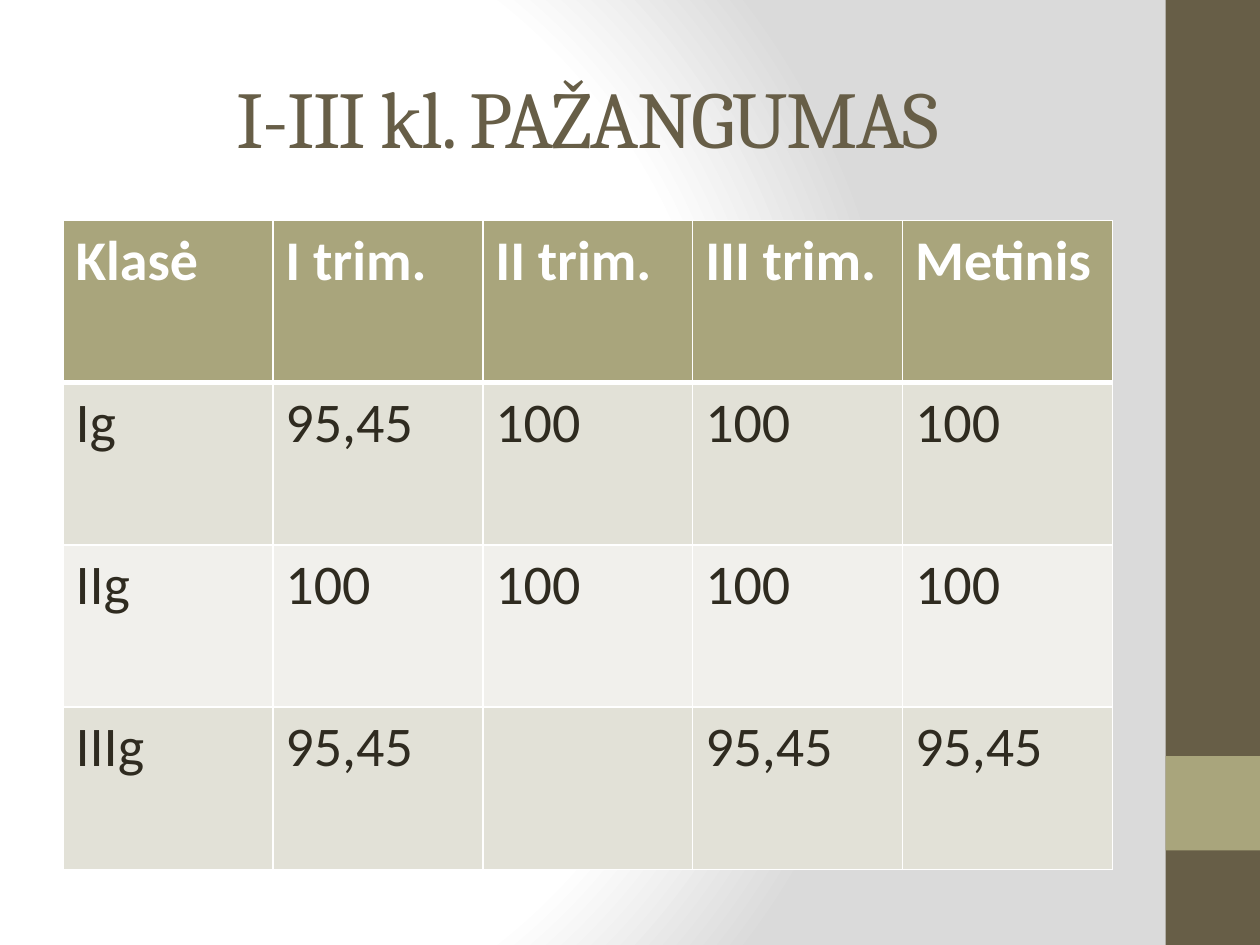
import pptx
import pptx.dml.color
import pptx.enum.shapes
import pptx.enum.text
import pptx.oxml
import pptx.oxml.ns
import pptx.util

WIDE, HIGH = 10, 7.5
LEFT, SPAN = 0.5, 8.33
HUES = {
    "brown": "675E47", "olive": "A9A57C", "ink": "2F2B20",
    "white": "FFFFFF", "grey": "DADADA", "band": "E2E1D7", "pale": "F1F0EC",
}
ROWS = [
    ["Klasė", "I trim.", "II trim.", "III trim.", "Metinis"],
    ["Ig", "95,45", "100", "100", "100"],
    ["IIg", "100", "100", "100", "100"],
    ["IIIg", "95,45", "", "95,45", "95,45"],
]


def inch(*sizes):
    return [pptx.util.Inches(size) for size in sizes]


def paint(fill, hue):
    fill.solid()
    fill.fore_color.rgb = pptx.dml.color.RGBColor.from_string(HUES[hue])


def parse(text):
    """Turn a snippet of DrawingML into an element."""
    head, tail = text.split(">", 1)
    space = pptx.oxml.ns.nsdecls("a")
    return pptx.oxml.parse_xml(f"{head} {space}>{tail}")


def write(frame, text, face, size, hue, bold=False):
    run = frame.paragraphs[0].add_run()
    run.text = text
    run.font.name = face
    run.font.size = pptx.util.Pt(size)
    run.font.bold = bold
    paint(run.font.fill, hue)
    return run


def shade(slide):
    """Give the slide a round gradient from white to grey."""
    slide.background.fill.gradient()
    grad = slide.element.xpath(".//a:gradFill")[0]
    for part in list(grad):
        grad.remove(part)
    stops = "".join(
        f'<a:gs pos="{spot * 1000}"><a:srgbClr val="{HUES[hue]}"/></a:gs>'
        for spot, hue in [(0, "white"), (75, "white"), (100, "grey")])
    grad.append(parse(f"<a:gsLst>{stops}</a:gsLst>"))
    grad.append(parse('<a:path path="circle"><a:fillToRect l="20000" t="50000" '
                      'r="100000" b="50000"/></a:path>'))


def block(slide, top, tall, hue):
    """Add a piece of the band along the right edge."""
    side = 0.75
    kind = pptx.enum.shapes.MSO_SHAPE.RECTANGLE
    shape = slide.shapes.add_shape(kind, *inch(WIDE - side, top, side, tall))
    shape.shadow.inherit = False
    paint(shape.fill, hue)
    shape.line.fill.background()


def title(slide, text):
    shape = slide.shapes.title
    shape.left, shape.top, shape.width, shape.height = inch(LEFT, 0.3, SPAN, 1.25)
    frame = shape.text_frame
    frame.vertical_anchor = pptx.enum.text.MSO_ANCHOR.MIDDLE
    frame.paragraphs[0].alignment = pptx.enum.text.PP_ALIGN.CENTER
    run = write(frame, text, "Cambria", 46, "brown")
    run.font._element.set("spc", "-100")


def border(cell, row):
    """Draw white cell edges, thick below the header row."""
    thick = {(0, "B"), (1, "T")}
    for side in "LRTB":
        width = pptx.util.Pt(3 if (row, side) in thick else 1)
        cell._tc.get_or_add_tcPr().append(parse(
            f'<a:ln{side} w="{width}"><a:solidFill>'
            f'<a:srgbClr val="{HUES["white"]}"/></a:solidFill></a:ln{side}>'))


def grid(slide, rows):
    shape = slide.shapes.add_table(
        len(rows), len(rows[0]), *inch(LEFT, 1.75, SPAN, 5.15))
    for r, row in enumerate(rows):
        first = r == 0
        back = "olive" if first else "band" if r % 2 else "pale"
        for c, text in enumerate(row):
            cell = shape.table.cell(r, c)
            border(cell, r)
            paint(cell.fill, back)
            if text:
                write(cell.text_frame, text, "Calibri", 32,
                      "white" if first else "ink", first)


def main():
    deck = pptx.Presentation()
    deck.slide_width, deck.slide_height = inch(WIDE, HIGH)
    slide = deck.slides.add_slide(deck.slide_layouts[5])
    shade(slide)
    block(slide, 0, HIGH, "brown")
    block(slide, 6, 0.75, "olive")
    title(slide, "I-III kl. PAŽANGUMAS")
    grid(slide, ROWS)
    deck.save("out.pptx")


if __name__ == "__main__":
    main()
